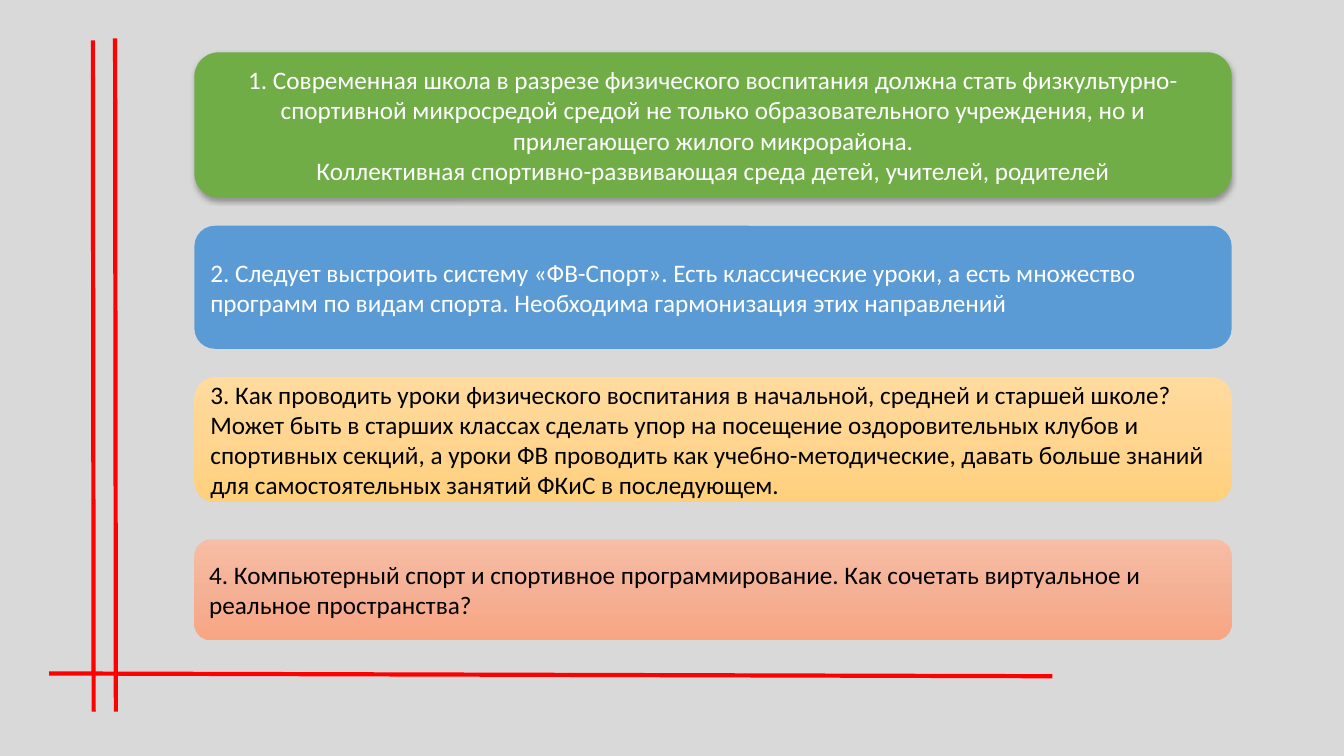
from lxml import etree
from pptx import Presentation
from pptx.dml.color import RGBColor
from pptx.enum.shapes import MSO_CONNECTOR, MSO_SHAPE
from pptx.enum.text import MSO_ANCHOR, PP_ALIGN
from pptx.oxml.ns import qn
from pptx.util import Cm, Pt

ROUNDED = MSO_SHAPE.ROUNDED_RECTANGLE
STRAIGHT = MSO_CONNECTOR.STRAIGHT
MIDDLE = MSO_ANCHOR.MIDDLE
LEFT, CENTER = PP_ALIGN.LEFT, PP_ALIGN.CENTER

FONT = "Calibri"
WHITE, BLACK, RED, GREY = "FFFFFF", "000000", "FF0000", "D9D9D9"
CARD_LEFT, CARD_WIDTH = 4.9, 26.14

CARDS = [
    dict(
        top=1.32, height=3.66, colors=["70AD47"], text_color=WHITE, align=CENTER, shadow=True,
        texts=[
            "1. Современная школа в разрезе физического воспитания должна стать "
            "физкультурно-спортивной микросредой средой не только образовательного "
            "учреждения, но и прилегающего жилого микрорайона.",
            "Коллективная спортивно-развивающая среда детей, учителей, родителей",
        ],
    ),
    dict(
        top=5.69, height=3.1, colors=["5B9BD5"], text_color=WHITE,
        texts=[
            "2. Следует выстроить систему «ФВ-Спорт». Есть классические уроки, а есть "
            "множество программ по видам спорта. Необходима гармонизация этих направлений",
        ],
    ),
    dict(
        top=9.5, height=3.15, colors=["FFDB9E", "FFD590", "FFD07C"], text_color=BLACK,
        texts=[
            "3. Как проводить уроки физического воспитания в начальной, средней и старшей "
            "школе? Может быть в старших классах сделать упор на посещение оздоровительных "
            "клубов и спортивных секций, а уроки ФВ проводить как учебно-методические, "
            "давать больше знаний для самостоятельных занятий ФКиС в последующем.",
        ],
    ),
    dict(
        top=13.59, height=2.54, colors=["F7BDA5", "F5B196", "F8A582"], text_color=BLACK,
        texts=[
            "4. Компьютерный спорт и спортивное программирование. Как сочетать "
            "виртуальное и реальное пространства?",
        ],
    ),
]

RED_LINES = [
    (2.34, 1.02, 2.36, 17.93),
    (2.9, 0.97, 2.92, 17.93),
    (1.24, 16.97, 26.52, 17.04),
]


def rgb(value):
    """Turn a hex string into a colour."""
    return RGBColor.from_string(value)


def paint(box, colors):
    """Fill a box with one colour or a top-to-bottom gradient of several."""
    if len(colors) == 1:
        box.fill.solid()
        box.fill.fore_color.rgb = rgb(colors[0])
        return
    box.fill.gradient()
    box.fill.gradient_angle = 270
    stops = box._element.spPr.find(".//" + qn("a:gsLst"))
    stops.clear()
    for index, color in enumerate(colors):
        position = 100000 * index // (len(colors) - 1)
        stop = etree.SubElement(stops, qn("a:gs"), pos=str(position))
        etree.SubElement(stop, qn("a:srgbClr"), val=color)


def drop_shadow(box):
    """Give a box a soft shadow that falls straight down."""
    effects = box._element.spPr.find(qn("a:effectLst"))
    shadow = etree.SubElement(
        effects, qn("a:outerShdw"), blurRad=str(Pt(3.5)), dist=str(Pt(2.2)),
        dir="5400000", algn="ctr", rotWithShape="0",
    )
    color = etree.SubElement(shadow, qn("a:srgbClr"), val=BLACK)
    etree.SubElement(color, qn("a:alpha"), val="32000")


def write(para, text, size=18, color=BLACK, align=LEFT):
    """Put formatted text into a paragraph."""
    para.alignment = align
    span = para.add_run()
    span.text = text
    span.font.name = FONT
    span.font.size = Pt(size)
    span.font.color.rgb = rgb(color)


def add_card(page, left, width, top, height, colors, texts, text_color, align=LEFT, shadow=False):
    """Draw one rounded card with its statement."""
    box = page.shapes.add_shape(ROUNDED, Cm(left), Cm(top), Cm(width), Cm(height))
    box.shadow.inherit = False
    box.line.fill.background()
    paint(box, colors)
    if shadow:
        drop_shadow(box)
    frame = box.text_frame
    frame.word_wrap = True
    frame.vertical_anchor = MIDDLE
    for index, text in enumerate(texts):
        para = frame.add_paragraph() if index else frame.paragraphs[0]
        write(para, text, color=text_color, align=align)


def add_red_line(page, start_x, start_y, end_x, end_y):
    """Draw one red line of the frame."""
    line = page.shapes.add_connector(STRAIGHT, Cm(start_x), Cm(start_y), Cm(end_x), Cm(end_y))
    line.line.color.rgb = rgb(RED)
    line.line.width = Pt(3)
    etree.SubElement(line._element.spPr, qn("a:effectLst"))


def main():
    """Build the slide and save the deck."""
    deck = Presentation()
    deck.slide_width, deck.slide_height = Cm(33.87), Cm(19.05)
    page = deck.slides.add_slide(deck.slide_layouts[6])
    page.background.fill.solid()
    page.background.fill.fore_color.rgb = rgb(GREY)
    for card in CARDS:
        add_card(page, CARD_LEFT, CARD_WIDTH, **card)
    for ends in RED_LINES:
        add_red_line(page, *ends)
    deck.save("out.pptx")


if __name__ == "__main__":
    main()
